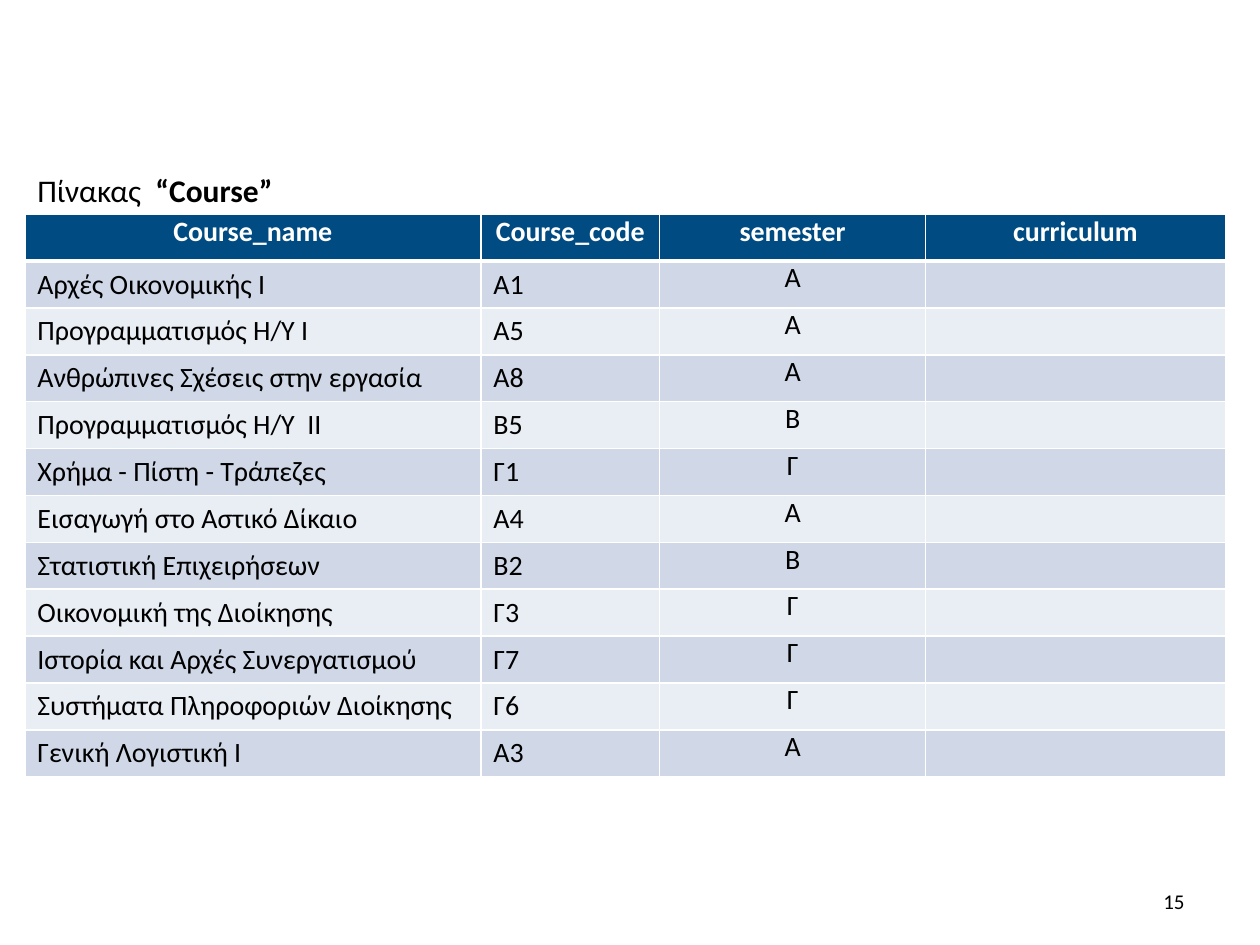
from lxml.etree import SubElement
from pptx import Presentation
from pptx.dml.color import RGBColor
from pptx.enum.text import MSO_ANCHOR, MSO_AUTO_SIZE, PP_ALIGN
from pptx.oxml.ns import qn
from pptx.util import Pt

HEADERS = ["Course_name", "Course_code", "semester", "curriculum"]
COURSES = [
    ("Αρχές Οικονομικής Ι", "Α1", "Α"),
    ("Προγραμματισμός Η/Υ Ι", "Α5", "Α"),
    ("Ανθρώπινες Σχέσεις στην εργασία", "Α8", "Α"),
    ("Προγραμματισμός Η/Υ  ΙΙ", "Β5", "Β"),
    ("Χρήμα - Πίστη - Τράπεζες", "Γ1", "Γ"),
    ("Εισαγωγή στο Αστικό Δίκαιο", "Α4", "Α"),
    ("Στατιστική Επιχειρήσεων", "Β2", "Β"),
    ("Οικονομική της Διοίκησης", "Γ3", "Γ"),
    ("Ιστορία και Αρχές Συνεργατισμού", "Γ7", "Γ"),
    ("Συστήματα Πληροφοριών Διοίκησης", "Γ6", "Γ"),
    ("Γενική Λογιστική Ι", "Α3", "Α"),
]
COLUMN_WIDTHS = [260.6, 102.2, 151.9, 171.4]
ROW_HEIGHT = 26.5


def color(hex_string):
    return RGBColor.from_string(hex_string)


class CourseSlide:
    font_name = "Calibri"
    black = "000000"
    white = "FFFFFF"
    header_fill = "004B82"
    band_fills = ["D0D8E8", "E9EDF4"]

    def __init__(self, deck):
        self.slide = deck.slides.add_slide(deck.slide_layouts[6])

    def style(self, para, size, text_color, bold=None, align=PP_ALIGN.LEFT):
        para.alignment = align
        para.font.name = self.font_name
        para.font.size = Pt(size)
        para.font.color.rgb = color(text_color)
        para.font.bold = bold

    def text(self, left, top, width, height, spans, size, align=PP_ALIGN.LEFT,
             anchor=MSO_ANCHOR.TOP, wrap=True):
        box = self.slide.shapes.add_textbox(Pt(left), Pt(top), Pt(width), Pt(height))
        frame = box.text_frame
        frame.word_wrap = wrap
        frame.auto_size = MSO_AUTO_SIZE.NONE if wrap else MSO_AUTO_SIZE.SHAPE_TO_FIT_TEXT
        frame.vertical_anchor = anchor
        para = frame.paragraphs[0]
        self.style(para, size, self.black, align=align)
        for words, bold in spans:
            span = para.add_run()
            span.text = words
            span.font.bold = bold

    def borders(self, cell, bottom_width):
        properties = cell._tc.get_or_add_tcPr()
        for side, width in [("L", 1), ("R", 1), ("T", 1), ("B", bottom_width)]:
            line = SubElement(properties, qn(f"a:ln{side}"), w=str(Pt(width)))
            fill = SubElement(line, qn("a:solidFill"))
            SubElement(fill, qn("a:srgbClr"), val=self.white)

    def cell(self, cell, words, fill, text_color, bold, centred, bottom_width):
        self.borders(cell, bottom_width)
        cell.fill.solid()
        cell.fill.fore_color.rgb = color(fill)
        if centred:
            cell.margin_left = cell.margin_right = Pt(5)
            cell.margin_top = cell.margin_bottom = 0
        cell.text = words
        align = PP_ALIGN.CENTER if centred else PP_ALIGN.LEFT
        self.style(cell.text_frame.paragraphs[0], 16, text_color, bold, align)

    def table(self, left, top, headers, records):
        rows = len(records) + 1
        table = self.slide.shapes.add_table(
            rows, len(headers), Pt(left), Pt(top),
            Pt(sum(COLUMN_WIDTHS)), Pt(ROW_HEIGHT * rows)).table
        for column, width in zip(table.columns, COLUMN_WIDTHS):
            column.width = Pt(width)
        for row in table.rows:
            row.height = Pt(ROW_HEIGHT)
        for index, words in enumerate(headers):
            self.cell(table.cell(0, index), words, self.header_fill, self.white, True, True, 3)
        for number, record in enumerate(records):
            fill = self.band_fills[number % 2]
            for index, words in enumerate([*record, ""]):
                self.cell(table.cell(number + 1, index), words, fill, self.black,
                          False, index >= 2, 1)


def main():
    deck = Presentation()
    deck.slide_width, deck.slide_height = Pt(720), Pt(540)
    page = CourseSlide(deck)
    page.table(14.2, 122.7, HEADERS, COURSES)
    page.text(14.2, 94.4, 150.2, 29, [("Πίνακας  ", None), ("“Course”", True)], 18, wrap=False)
    page.text(516, 500.5, 168, 28.75, [("15", None)], 12, PP_ALIGN.RIGHT, MSO_ANCHOR.MIDDLE)
    deck.save("out.pptx")


if __name__ == "__main__":
    main()
